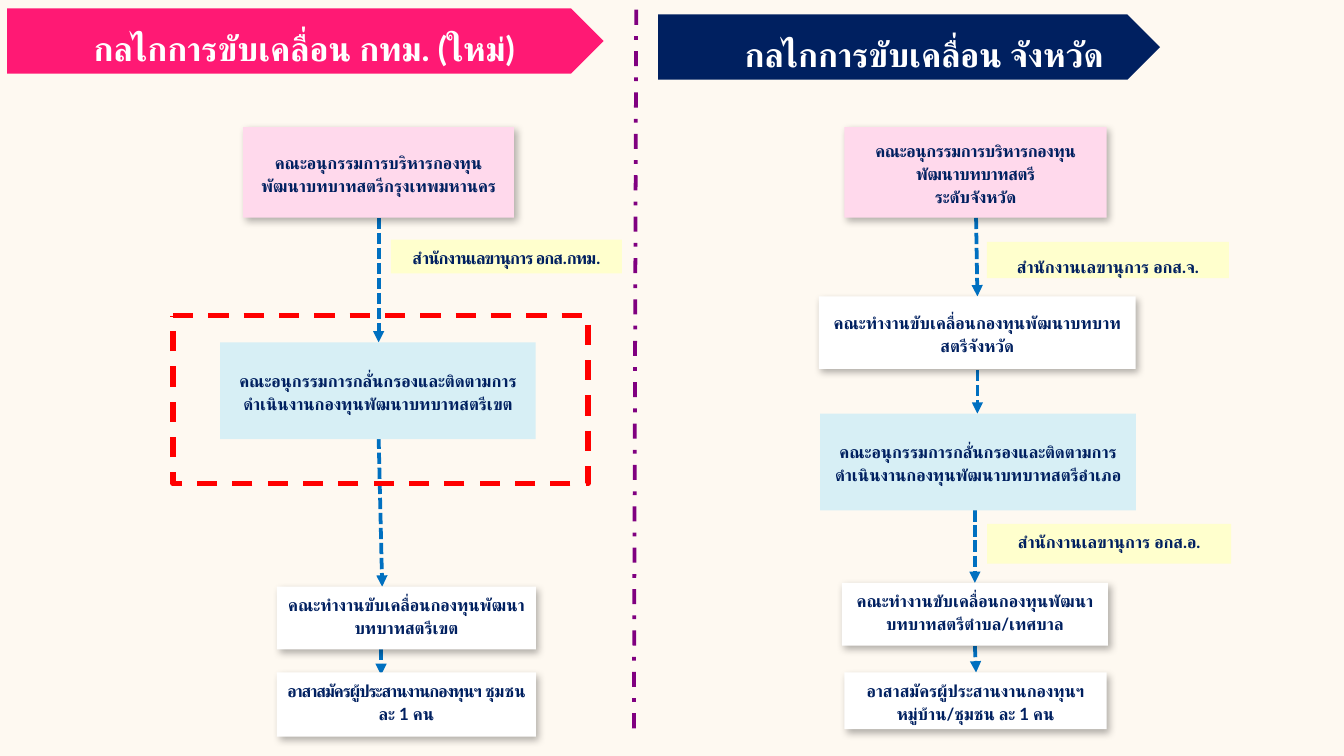
import pptx
import pptx.util
import pptx.dml.color
import pptx.enum.dml
import pptx.enum.lang
import pptx.enum.shapes
import pptx.enum.text
import pptx.oxml
import pptx.oxml.ns
import lxml.etree

Pt = pptx.util.Pt
SHAPE = pptx.enum.shapes.MSO_SHAPE
DASH = pptx.enum.dml.MSO_LINE
ALIGN = pptx.enum.text.PP_ALIGN
ANCHOR = pptx.enum.text.MSO_ANCHOR

FONT = "Lato"
COLOURS = {
    "page": "FEF9F1", "bangkok": "FF1974", "province": "002060", "text": "002060",
    "title": "FFFFFF", "board": "FFD9EC", "team": "FFFFFF", "screening": "D7EFF5",
    "office": "FFFFCD", "arrow": "0070C0", "divider": "800080", "frame": "FF0000",
}

# Titles: text, colour, (left, top, width, height)
TITLES = [
    ("กลไกการขับเคลื่อน กทม. (ใหม่)", "bangkok", (4.3, 5, 355, 38.9)),
    ("กลไกการขับเคลื่อน จังหวัด", "province", (391.7, 8.6, 298.8, 38.9)),
]

# Boxes: kind, place, lines; each line is a list of (text, letter spacing)
BOXES = [
    # Bangkok
    ("board", (144.7, 75.6, 161.3, 54), [[("คณะอนุกรรมการบริหารกองทุนพัฒนาบทบาทสตรีกรุงเทพมหานคร", 0)]]),
    ("office", (232.6, 142.6, 137.5, 20.2), [[("สำนักงานเลขานุการ อกส.กทม.", -0.5)]]),
    ("screening", (131, 203.8, 187.9, 57.6),
     [[("คณะอนุกรรมการกลั่นกรองและติดตามการดำเนินงานกองทุนพัฒนาบทบาทสตรีเขต", 0)]]),
    ("team", (164.9, 349.2, 154.1, 37.4), [[("คณะทำงานขับเคลื่อนกองทุนพัฒนาบทบาทสตรีเขต", 0)]]),
    ("team", (164.9, 400.3, 154.1, 38.2),
     [[("อาสาสมัครผู้ประสานงานกองทุนฯ ", -0.6), ("ชุมชนละ 1 คน", 0)]]),
    # Province
    ("board", (502.6, 75.6, 156.2, 54),
     [[("คณะอนุกรรมการบริหารกองทุน", -0.2)], [("พัฒนาบทบาทสตรี", -0.2)], [("ระดับจังหวัด", 0)]]),
    ("office", (587.5, 144, 144, 21.6), [[("สำนักงานเลขานุการ อกส.จ.", 0)]]),
    ("team", (487.4, 176.4, 188.6, 43.2), [[("คณะทำงานขับเคลื่อนกองทุนพัฒนาบทบาทสตรีจังหวัด", 0)]]),
    ("screening", (488.2, 246.2, 187.9, 57.6),
     [[("คณะอนุกรรมการกลั่นกรองและติดตามการดำเนินงานกองทุนพัฒนาบทบาทสตรีอำเภอ", 0)]]),
    ("office", (587.5, 311.8, 145.4, 23.8), [[("สำนักงานเลขานุการ อกส.อ.", 0)]]),
    ("team", (501.1, 347, 158.4, 37.4), [[("คณะทำงานขับเคลื่อนกองทุนพัฒนาบทบาทสตรีตำบล/เทศบาล", 0)]]),
    ("team", (502.6, 400.3, 156.2, 33.8),
     [[("อาสาสมัครผู้ประสานงานกองทุนฯ", 0)], [("หมู่บ้าน/ชุมชน ละ 1 คน", 0)]]),
]
MIDDLE = {0, 2, 5, 7, 8}                    # boxes with vertically centred text
SPACING = {1: (1.15, 5, 8.3), 6: (1.5, 5, 0), 9: (1.15, 0, 0)}   # line, before, after

# Arrows: x1, y1, x2, y2
ARROWS = [
    (225.4, 129.6, 225.4, 203.8), (225.4, 260.5, 227.5, 349.2), (226.8, 386, 226.8, 401.8),
    (581, 129.6, 581.8, 176.4), (581.8, 220.3, 581.8, 246.2),
    (580.3, 303.8, 580.3, 347), (580.3, 384.5, 581, 400.3),
]
DIVIDER = (378.7, 5.8, 377.3, 438.5)
FRAME = (103, 187.9, 247, 100.1)

SHADOW = ('<a:effectLst %s><a:outerShdw blurRad="57150" dist="33020" dir="3180000" algn="ctr" '
          'rotWithShape="0"><a:srgbClr val="000000"><a:alpha val="30000"/></a:srgbClr>'
          '</a:outerShdw></a:effectLst>') % pptx.oxml.ns.nsdecls("a")


def colour(name):
    return pptx.dml.color.RGBColor.from_string(COLOURS[name])


def add_child(parent, tag, **attributes):
    return lxml.etree.SubElement(parent, pptx.oxml.ns.qn(tag), attributes)


def set_line(line, name, width, dash):
    line.color.rgb = colour(name)
    line.width = Pt(width)
    line.dash_style = dash


def add_line(page, ends, name, dash, arrow=False):
    line = page.shapes.add_connector(
        pptx.enum.shapes.MSO_CONNECTOR.STRAIGHT, *[Pt(value) for value in ends])
    set_line(line.line, name, 2.25, dash)
    if arrow:
        add_child(line.line._get_or_add_ln(), "a:tailEnd", type="triangle")
    add_child(line._element.spPr, "a:effectLst")


def add_box(page, preset, place, fill=None):
    box = page.shapes.add_shape(preset, *[Pt(value) for value in place])
    box.shadow.inherit = False
    box.line.fill.background()
    if fill:
        box.fill.solid()
        box.fill.fore_color.rgb = colour(fill)
    else:
        box.fill.background()
    return box


def write(box, lines, size, name, align, anchor, margins):
    frame = box.text_frame
    frame.word_wrap = True
    frame.vertical_anchor = anchor
    frame.margin_left, frame.margin_top, frame.margin_right, frame.margin_bottom = map(Pt, margins)
    para = frame.paragraphs[0]
    para.alignment = align
    font = para.font
    font.name, font.size, font.bold = FONT, Pt(size), True
    font.color.rgb = colour(name)
    font.language_id = pptx.enum.lang.MSO_LANGUAGE_ID.THAI
    add_child(font._element, "a:cs", typeface=FONT)
    for number, line in enumerate(lines):
        if number:
            para.add_line_break()
        for text, spacing in line:
            span = para.add_run()
            span.text = text
            if spacing:
                span._r.get_or_add_rPr().set("spc", str(round(spacing * 100)))
    return para


def main():
    deck = pptx.Presentation()
    deck.slide_width, deck.slide_height = Pt(800), Pt(450)
    page = deck.slides.add_slide(deck.slide_layouts[6])
    page.background.fill.solid()
    page.background.fill.fore_color.rgb = colour("page")

    # Divider and arrows
    add_line(page, DIVIDER, "divider", DASH.DASH_DOT)
    for ends in ARROWS:
        add_line(page, ends, "arrow", DASH.SQUARE_DOT, arrow=True)

    # Column titles
    for text, fill, place in TITLES:
        box = add_box(page, SHAPE.PENTAGON, place, fill)
        write(box, [[(text, 0)]], 20, "title", ALIGN.LEFT, ANCHOR.BOTTOM, (51.5, 3.6, 7.2, 3.6))

    # Dashed frame
    frame = add_box(page, SHAPE.FLOWCHART_PROCESS, FRAME)
    set_line(frame.line, "frame", 3, DASH.DASH)

    # Organisation boxes
    for number, (kind, place, lines) in enumerate(BOXES):
        box = add_box(page, SHAPE.RECTANGLE, place, kind)
        if kind in ("board", "team"):
            properties = box._element.spPr
            properties.replace(properties.find(pptx.oxml.ns.qn("a:effectLst")),
                               pptx.oxml.parse_xml(SHADOW))
        anchor = ANCHOR.MIDDLE if number in MIDDLE else ANCHOR.TOP
        para = write(box, lines, 10, "text", ALIGN.CENTER, anchor, (5.8, 2.9, 5.8, 2.9))
        spacing, before, after = SPACING.get(number, (1.15, 0, 8.3))
        para.line_spacing = spacing
        para.space_before, para.space_after = Pt(before), Pt(after)

    deck.save("out.pptx")


if __name__ == "__main__":
    main()
